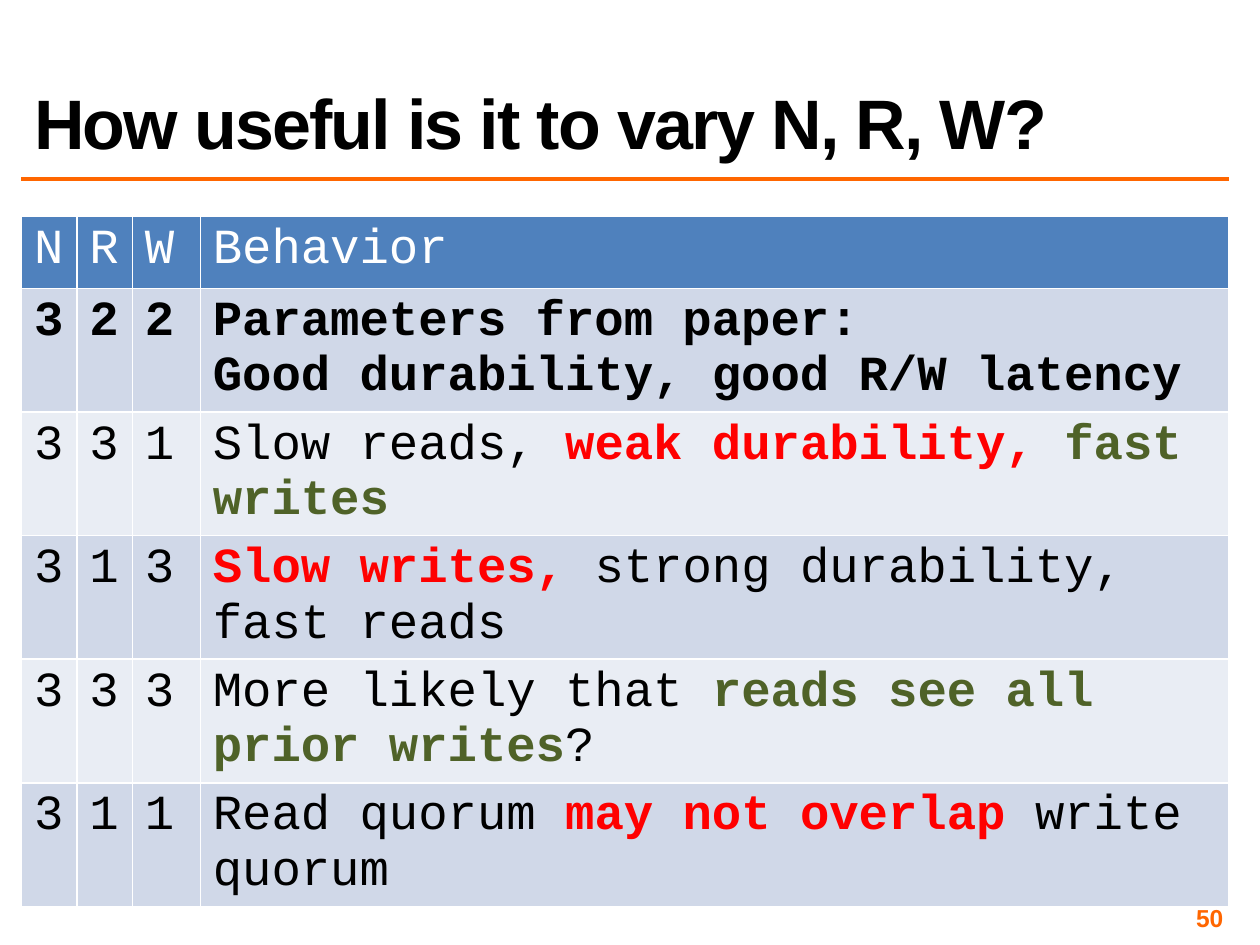
from lxml import etree
from pptx import Presentation
from pptx import util as u
from pptx.dml.color import RGBColor
from pptx.enum import shapes, text
from pptx.oxml import parse_xml
from pptx.oxml.ns import qn

BLACK = RGBColor(0, 0, 0)
WHITE = RGBColor(255, 255, 255)
RED = RGBColor(255, 0, 0)
GREEN = RGBColor(0x4F, 0x62, 0x28)
ORANGE = RGBColor(0xFF, 0x66, 0)
BLUE = RGBColor(0x4F, 0x81, 0xBD)
BANDS = RGBColor(0xE9, 0xED, 0xF4), RGBColor(0xD0, 0xD8, 0xE8)

TITLE = "How useful is it to vary N, R, W?"
PAGE = "50"
HEAD = "N", "R", "W", [[("Behavior", WHITE, False)]]
ROWS = [
    ("3", "2", "2", [[("Parameters from paper:", BLACK, True)],
                     [("Good durability, good R/W latency", BLACK, True)]]),
    ("3", "3", "1", [[("Slow reads, ", BLACK, False), ("weak durability, ", RED, True),
                      ("fast writes", GREEN, True)]]),
    ("3", "1", "3", [[("Slow writes, ", RED, True),
                      ("strong durability, fast reads", BLACK, False)]]),
    ("3", "3", "3", [[("More likely that ", BLACK, False),
                      ("reads see all prior writes", GREEN, True), ("?", BLACK, False)]]),
    ("3", "1", "1", [[("Read quorum ", BLACK, False), ("may not overlap ", RED, True),
                      ("write quorum", BLACK, False)]]),
]
LEFT, WIDE = 0.17, 9.58
COLS = 0.44, 0.44, 0.54, 8.16
TOP, HIGH, TALL = 1.72, 0.57, 0.98
EDGE = ('<a:{} xmlns:a="http://schemas.openxmlformats.org/drawingml/2006/main" w="12700">'
        '<a:solidFill><a:srgbClr val="FFFFFF"/></a:solidFill></a:{}>')


def write(para, words, font="Arial", size=28, color=BLACK, bold=False,
          align=text.PP_ALIGN.LEFT):
    """Add one formatted run to a paragraph."""
    para.alignment = align
    run = para.add_run()
    run.text = words
    face = run.font
    face.name, face.size, face.bold = font, u.Pt(size), bold
    face.color.rgb = color
    return run


def box(*sides):
    """Turn lengths in inches into slide units."""
    return [u.Inches(side) for side in sides]


def paint(cell, paras, fill):
    """Fill a cell with styled paragraphs and white edges."""
    cell.fill.solid()
    cell.fill.fore_color.rgb = fill
    props = cell._tc.get_or_add_tcPr()
    for i, side in enumerate(("lnL", "lnR", "lnT", "lnB")):
        props.insert(i, parse_xml(EDGE.format(side, side)))
    frame = cell.text_frame
    for i, runs in enumerate(paras):
        para = frame.add_paragraph() if i else frame.paragraphs[0]
        for words, color, bold in runs:
            write(para, words, font="Courier New", color=color, bold=bold)


def grid(slide):
    """Draw the table of quorum settings."""
    rows = [HEAD, *ROWS]
    table = slide.shapes.add_table(
        len(rows), len(COLS), *box(LEFT, TOP, WIDE, HIGH + TALL * len(ROWS))).table
    table.first_row = table.horz_banding = False
    for col, width in zip(table.columns, COLS):
        col.width = u.Inches(width)
    for r, row in enumerate(rows):
        table.rows[r].height = u.Inches(TALL if r else HIGH)
        color, fill = (BLACK, BANDS[r % 2]) if r else (WHITE, BLUE)
        for c, item in enumerate(row):
            paras = [[(item, color, r == 1)]] if isinstance(item, str) else item
            paint(table.cell(r, c), paras, fill)


def main():
    """Build and save the slide."""
    deck = Presentation()
    deck.slide_width, deck.slide_height = box(10, 7.5)
    slide = deck.slides.add_slide(deck.slide_layouts[5])

    rule = slide.shapes.add_connector(
        shapes.MSO_CONNECTOR.STRAIGHT, *box(LEFT, 1.42, LEFT + WIDE, 1.42))
    rule.line.color.rgb, rule.line.width = ORANGE, u.Pt(2)
    etree.SubElement(rule._element.spPr, qn("a:effectLst"))

    title = slide.shapes.title
    title.left, title.top, title.width, title.height = box(LEFT, 0.17, WIDE, 1.17)
    frame = title.text_frame
    frame.vertical_anchor = text.MSO_ANCHOR.BOTTOM
    frame.auto_size = text.MSO_AUTO_SIZE.NONE
    para = frame.paragraphs[0]
    para.line_spacing = 0.8
    run = write(para, TITLE, size=40, bold=True)
    run.font._element.set("spc", "-100")

    grid(slide)

    frame = slide.shapes.add_textbox(*box(7.42, 7.17, 2.33, 0.23)).text_frame
    frame.word_wrap = True
    frame.vertical_anchor = text.MSO_ANCHOR.MIDDLE
    frame.margin_left = frame.margin_right = u.Inches(0.04)
    frame.margin_top = frame.margin_bottom = u.Inches(0.04)
    write(frame.paragraphs[0], PAGE, size=14, color=ORANGE, bold=True,
          align=text.PP_ALIGN.RIGHT)

    deck.save("out.pptx")


if __name__ == "__main__":
    main()
